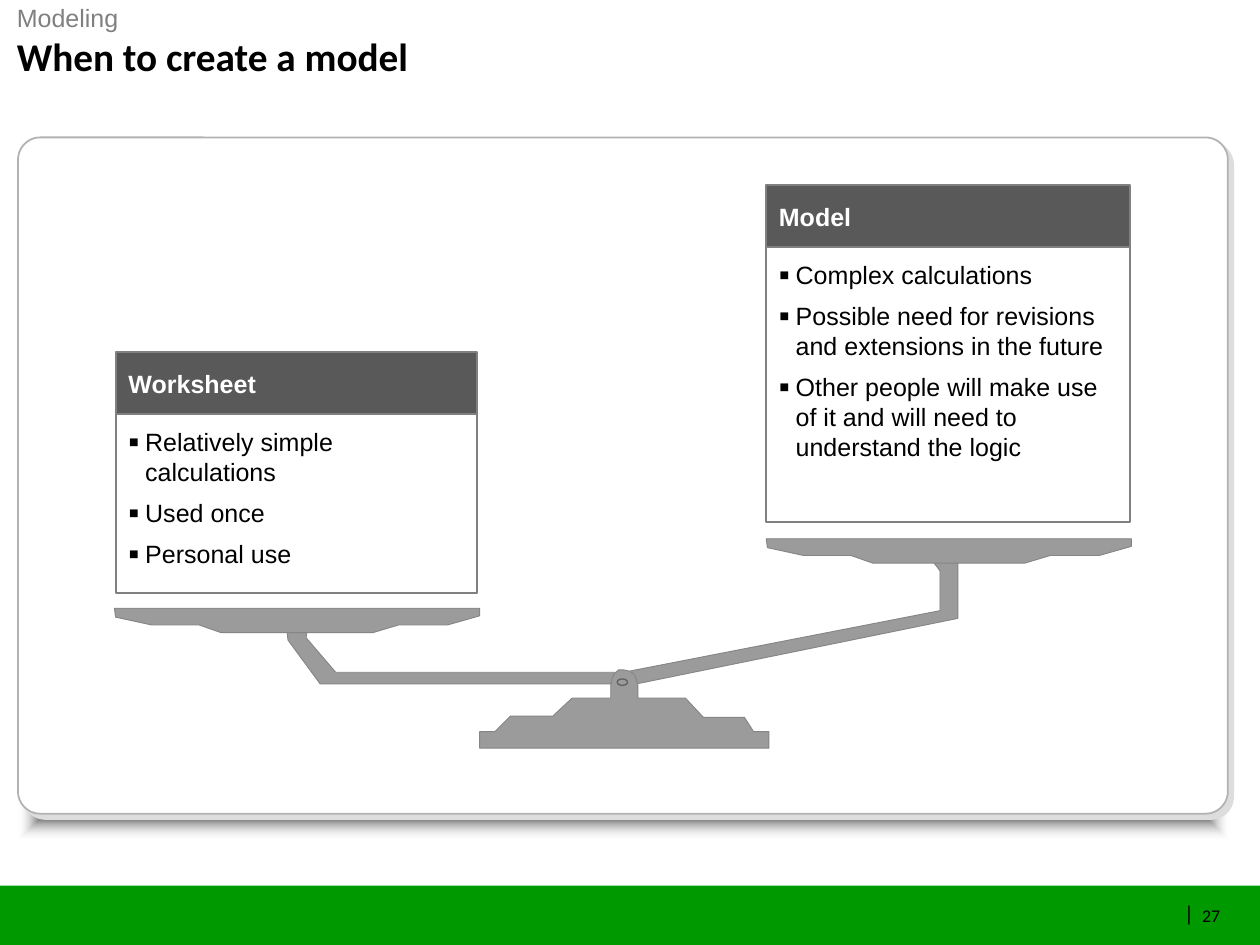
from pptx import Presentation
from pptx.dml.color import RGBColor
from pptx.enum.shapes import MSO_SHAPE as Kind
from pptx.enum.text import MSO_ANCHOR as Anchor, PP_ALIGN as Align
from pptx.oxml import parse_xml
from pptx.oxml.ns import nsdecls, qn
from pptx.util import Pt

METAL, EDGE = "9B9B9B", "858585"
PAN = [(0, 0), (204.5, 0), (204.5, 4.3), (186.5, 9.4), (159.1, 9.4),
       (144.7, 13.7), (59.8, 13.7), (47.5, 9.4), (20.9, 9.4), (0.7, 5)]
BEAM = [(0, 38.9), (0.7, 44.6), (18.7, 69.1), (195.8, 69.1), (375.8, 32.4),
        (375.8, 0), (361.4, 0), (365.8, 5.8), (365.8, 28.1), (188.6, 62.6),
        (27.4, 62.6), (10.8, 43.2), (11.5, 38.9)]
STAND = [(0, 43.9), (162, 43.9), (162, 34.6), (153.4, 34.6), (148.3, 26.6),
         (125.3, 26.6), (115.2, 15.8), (88.6, 15.8), (88.6, 8.6), (87.8, 5.8),
         (87.1, 3.6), (86.4, 2.2), (83.5, 0.7), (80.6, 0), (77.8, 0),
         (76.3, 1.4), (74.9, 2.9), (74.2, 5), (73.4, 8.6), (73.4, 15.8),
         (51.8, 15.8), (41, 25.9), (17.3, 25.9), (8.6, 34.6), (0, 34.6)]


def color(code):
    return RGBColor.from_string(code)


def xml(tag, body):
    return parse_xml(f"<a:{tag} {nsdecls('a')} {body}")


def paint(shape, fill=None, line=None, width=1):
    shape.shadow.inherit = False
    if fill:
        shape.fill.solid()
        shape.fill.fore_color.rgb = color(fill)
    else:
        shape.fill.background()
    if line:
        shape.line.color.rgb = color(line)
        shape.line.width = Pt(width)
    else:
        shape.line.fill.background()
    return shape


def block(slide, box, kind=Kind.RECTANGLE, **style):
    return paint(slide.shapes.add_shape(kind, *map(Pt, box)), **style)


def bullet(para):
    props = para._p.get_or_add_pPr()
    props.set("marL", str(Pt(9.4)))
    props.set("indent", str(-Pt(9.4)))
    props.append(xml("buClr", '><a:srgbClr val="000000"/></a:buClr>'))
    props.append(xml("buSzPct", 'val="125000"/>'))
    props.append(xml("buFont", 'typeface="Arial"/>'))
    props.append(xml("buChar", 'char="▪"/>'))


def write(shape, *lines, size=14, font="Arial", fill="000000", bold=False,
          inset=0, anchor=Anchor.TOP, align=Align.LEFT, wrap=True, list=False):
    frame = shape.text_frame
    frame.word_wrap = wrap
    frame.vertical_anchor = anchor
    frame.margin_left = frame.margin_right = Pt(inset)
    frame.margin_top = frame.margin_bottom = Pt(inset)
    for i, line in enumerate(lines):
        para = frame.add_paragraph() if i else frame.paragraphs[0]
        para.alignment = align
        if list:
            para.space_after = Pt(6)
            bullet(para)
        run = para.add_run()
        run.text = line
        run.font.size = Pt(size)
        run.font.name = font
        run.font.bold = bold
        run.font.color.rgb = color(fill)


def label(slide, box, text, **style):
    write(slide.shapes.add_textbox(*map(Pt, box)), text, **style)


def trace(slide, x, y, dots):
    spots = [(Pt(x + a), Pt(y + b)) for a, b in dots]
    pen = slide.shapes.build_freeform(*spots[0], scale=1.0)
    pen.add_line_segments(spots[1:], close=True)
    paint(pen.convert_to_shape(), METAL, EDGE, 0.5)


def head(slide, x, y, w):
    label(slide, (x, y, 288, 17.3), "Modeling", fill="808080")
    label(slide, (x, y + 16.6, w, 26.6), "When to create a model",
          size=22, font="Calibri", bold=True)


def foot(slide, x, y, w, h):
    block(slide, (x, y, w, h), fill="009900")
    label(slide, (x + w - 42.5, y + 8, 2.9, 14.4), "|", size=12,
          font="Calibri", anchor=Anchor.MIDDLE, align=Align.RIGHT, wrap=False)
    label(slide, (x + w - 32.4, y + 10.9, 11.5, 12.2), "27", size=10,
          font="Calibri", wrap=False)


def card(slide, x, y, w, h):
    glow = block(slide, (x, y + h - 13.7, w + 0.7, 28.8),
                 Kind.ROUNDED_RECTANGLE, fill="000000")
    glow.adjustments[0] = 0.09
    props = glow._element.spPr
    props.replace(props.find(qn("a:solidFill")), xml(
        "gradFill", 'rotWithShape="1"><a:gsLst>'
        '<a:gs pos="0"><a:srgbClr val="000000"><a:alpha val="70000"/></a:srgbClr></a:gs>'
        '<a:gs pos="100000"><a:srgbClr val="FFFFFF"><a:alpha val="0"/></a:srgbClr></a:gs>'
        '</a:gsLst><a:path path="shape">'
        '<a:fillToRect l="50000" t="50000" r="50000" b="50000"/>'
        '</a:path></a:gradFill>'))
    face = block(slide, (x, y, w, h), Kind.ROUNDED_RECTANGLE,
                 fill="FFFFFF", line="B2B2B2")
    face.adjustments[0] = 0.033
    face._element.spPr.find(qn("a:effectLst")).append(xml(
        "outerShdw", f'blurRad="0" dist="{Pt(4.2)}" dir="2700000" algn="ctr" '
        'rotWithShape="0"><a:srgbClr val="DDDDDD"/></a:outerShdw>'))


def panel(slide, x, y, w, h, title, items):
    top = 34.6
    bar = block(slide, (x, y, w, top), fill="595959", line="808080")
    write(bar, title, fill="FFFFFF", bold=True, inset=7.2, anchor=Anchor.MIDDLE)
    body = block(slide, (x, y + top, w, h - top), line="808080")
    write(body, *items, inset=7.2, list=True)


def scale(slide, x, y):
    trace(slide, x + 96.5, y + 12.2, BEAM)
    trace(slide, x + 204.5, y + 73.4, STAND)
    block(slide, (x + 281.5, y + 78.5, 5.8, 3.6), Kind.OVAL,
          fill=METAL, line="606060", width=0.75)
    trace(slide, x + 365, y, PAN)
    trace(slide, x, y + 38.9, PAN)


def main():
    deck = Presentation()
    deck.slide_width, deck.slide_height = Pt(705.6), Pt(529.2)
    slide = deck.slides.add_slide(deck.slide_layouts[6])
    foot(slide, 0, 496, 705.6, 33.2)
    card(slide, 10.1, 77, 677.5, 378.7)
    head(slide, 9.4, 1.4, 679)
    panel(slide, 64.8, 197.3, 202.3, 134.7, "Worksheet",
          ["Relatively simple calculations", "Used once", "Personal use"])
    panel(slide, 429.1, 103.7, 203.8, 188.7, "Model",
          ["Complex calculations",
           "Possible need for revisions and extensions in the future",
           "Other people will make use of it and will need to understand the logic"])
    scale(slide, 64.1, 301.7)
    deck.save("out.pptx")


if __name__ == "__main__":
    main()
